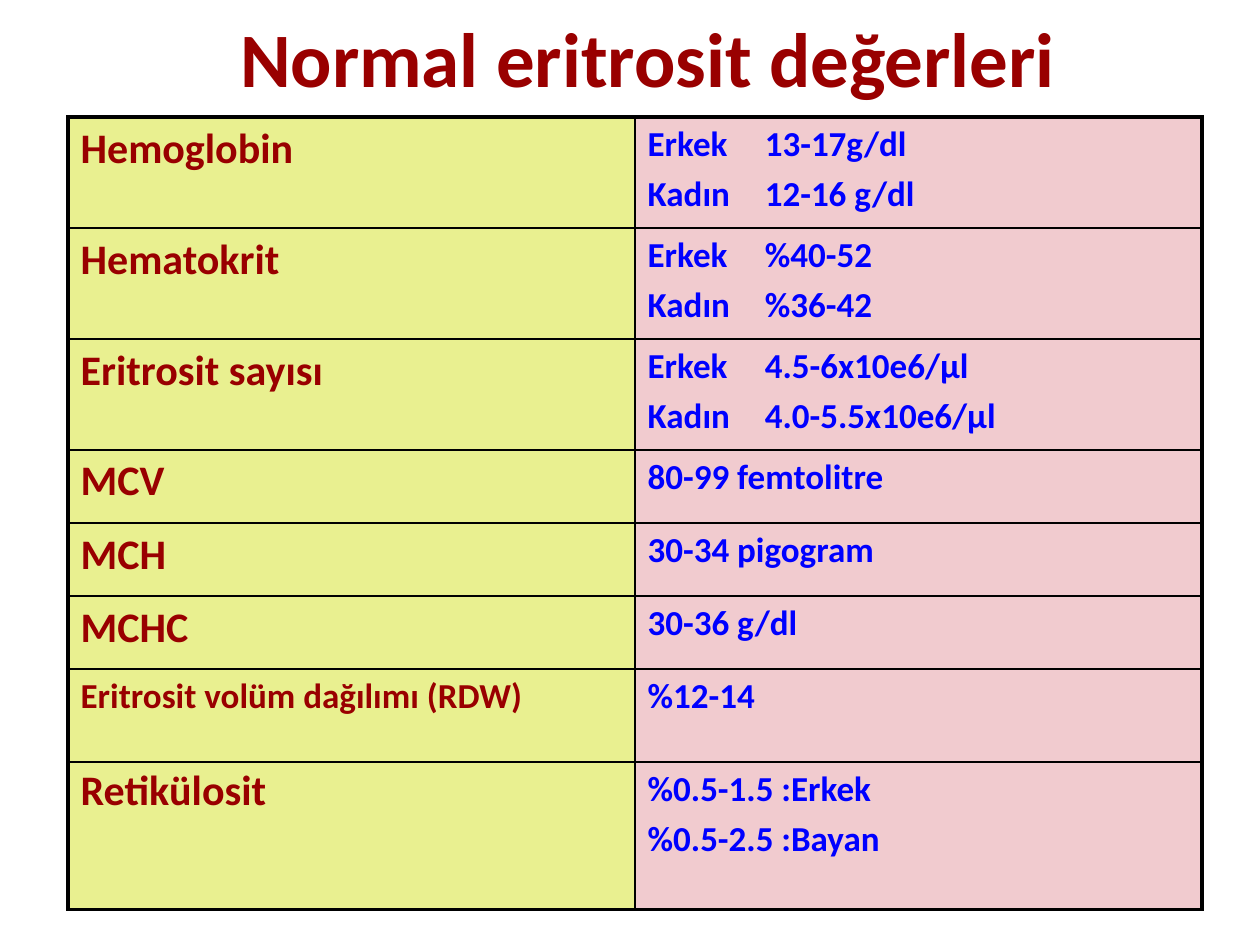
"""Build a slide with a table of normal red cell values."""
import dataclasses
import typing

import lxml.etree
import pptx
import pptx.dml.color
import pptx.enum.text
import pptx.oxml.ns
import pptx.util

WIDE, HIGH = pptx.util.Inches(10), pptx.util.Inches(7.5)
UNITS = 750
HUES = {"name": "990000", "value": "0000FF", "left": "E9F090", "right": "F1CBCF", "rule": "000000"}
FONT = {"name": "Calibri", "bold": True}
THICK, THIN = 2.25, 1
STOP = 0.093


@dataclasses.dataclass
class Row:
    name: str
    values: tuple[str, ...]
    units: int
    size: int = 24
    pitch: float = 1.0


ROWS = [
    Row("Hemoglobin", ("Erkek\t13-17g/dl", "Kadın\t12-16 g/dl"), 88),
    Row("Hematokrit", ("Erkek\t%40-52", "Kadın\t%36-42"), 88),
    Row("Eritrosit sayısı", ("Erkek\t4.5-6x10e6/μl", "Kadın\t4.0-5.5x10e6/μl"), 88),
    Row("MCV", ("80-99 femtolitre",), 58),
    Row("MCH", ("30-34 pigogram",), 58),
    Row("MCHC", ("30-36 g/dl",), 58),
    Row("Eritrosit volüm dağılımı (RDW)", ("%12-14",), 74, 20),
    Row("Retikülosit", ("%0.5-1.5 :Erkek", "%0.5-2.5 :Bayan"), 117, pitch=0.9),
]


def span(share: float, whole: int) -> int:
    return round(share * whole)


def assign(thing: typing.Any, values: dict) -> None:
    for key, value in values.items():
        setattr(thing, key, value)


def node(root: typing.Any, tag: str, **attrs: str) -> typing.Any:
    return lxml.etree.SubElement(root, pptx.oxml.ns.qn(tag), attrs)


def write(para: typing.Any, text: str, size: int, hue: str) -> None:
    run = para.add_run()
    run.text = text
    assign(run.font, FONT | {"size": pptx.util.Pt(size)})
    run.font.color.rgb = pptx.dml.color.RGBColor.from_string(HUES[hue])


def edge(cell: typing.Any, widths: dict[str, float]) -> None:
    props = cell._tc.get_or_add_tcPr()
    for place, (side, width) in enumerate(widths.items()):
        line = lxml.etree.Element(pptx.oxml.ns.qn(f"a:ln{side}"), w=str(pptx.util.Pt(width)))
        node(node(line, "a:solidFill"), "a:srgbClr", val=HUES["rule"])
        props.insert(place, line)


def fill(cell: typing.Any, lines: tuple[str, ...], size: int, pitch: float, ink: str, back: str) -> None:
    cell.fill.solid()
    cell.fill.fore_color.rgb = pptx.dml.color.RGBColor.from_string(HUES[back])
    frame = cell.text_frame
    for place, text in enumerate(lines):
        para = frame.add_paragraph() if place else frame.paragraphs[0]
        assign(para, {"space_before": pptx.util.Pt(size * 0.2), "line_spacing": pitch})
        if "\t" in text:
            tabs = node(para._p.get_or_add_pPr(), "a:tabLst")
            node(tabs, "a:tab", pos=str(span(STOP, WIDE)), algn="l")
        write(para, text, size, ink)


def title(slide: typing.Any, text: str) -> None:
    box = slide.shapes.add_textbox(
        span(0.081, WIDE), span(0.023, HIGH), span(0.867, WIDE), span(0.073, HIGH))
    frame = box.text_frame
    assign(frame, {"word_wrap": True, "vertical_anchor": pptx.enum.text.MSO_ANCHOR.MIDDLE})
    frame.paragraphs[0].alignment = pptx.enum.text.PP_ALIGN.CENTER
    write(frame.paragraphs[0], text, 44, "name")


def chart(slide: typing.Any, rows: list[Row]) -> None:
    tall = sum(row.units for row in rows) / UNITS
    grid = slide.shapes.add_table(
        len(rows), 2, span(0.054, WIDE), span(0.124, HIGH), span(0.9, WIDE), span(tall, HIGH)).table
    assign(grid, {"first_row": False, "horz_banding": False})
    for place, row in enumerate(rows):
        grid.rows[place].height = span(row.units / UNITS, HIGH)
        left, right = grid.cell(place, 0), grid.cell(place, 1)
        fill(left, (row.name,), row.size, row.pitch, "name", "left")
        fill(right, row.values, 20, 1.0, "value", "right")
        top = THIN if place else THICK
        base = THICK if place == len(rows) - 1 else THIN
        edge(left, {"L": THICK, "R": THIN, "T": top, "B": base})
        edge(right, {"L": THIN, "R": THICK, "T": top, "B": base})


def main() -> None:
    deck = pptx.Presentation()
    assign(deck, {"slide_width": WIDE, "slide_height": HIGH})
    slide = deck.slides.add_slide(deck.slide_layouts[6])
    title(slide, "Normal eritrosit değerleri")
    chart(slide, ROWS)
    deck.save("out.pptx")


if __name__ == "__main__":
    main()
